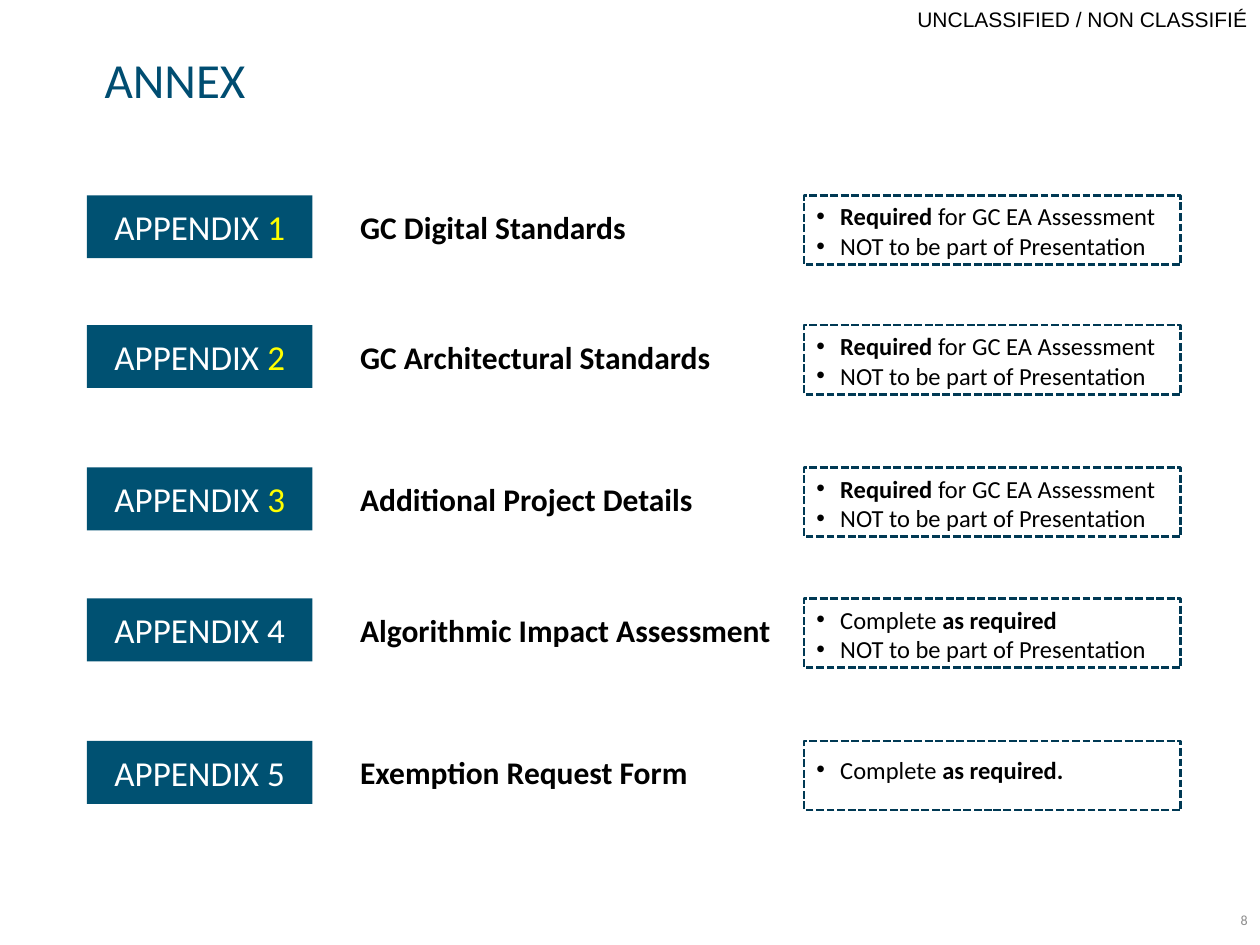
from lxml.etree import SubElement
from pptx import Presentation
from pptx.dml.color import RGBColor
from pptx.enum.dml import MSO_LINE
from pptx.enum.shapes import MSO_SHAPE
from pptx.enum.text import MSO_ANCHOR as ANCHOR, MSO_AUTO_SIZE as FIT, PP_ALIGN as ALIGN
from pptx.oxml.ns import qn
from pptx.util import Inches, Pt

BLACK = RGBColor(0x00, 0x00, 0x00)
WHITE = RGBColor(0xFF, 0xFF, 0xFF)
YELLOW = RGBColor(0xFF, 0xFF, 0x00)
GREY = RGBColor(0x8C, 0x8C, 0x8C)
TITLE_BLUE = RGBColor(0x00, 0x4D, 0x71)
TAG_BLUE = RGBColor(0x00, 0x51, 0x72)
NAVY = RGBColor(0x00, 0x39, 0x54)

REQUIRED = [("Required", {"bold": True}), (" for GC EA Assessment", {})]
NOT_PRESENTED = [("NOT to be part of Presentation", {})]

# top, number, number colour, name, width of name, notes, offset and height of notes
APPENDICES = [
    (1.55, "1", YELLOW, "GC Digital Standards", 2.39, [REQUIRED, NOT_PRESENTED], 0, 0.57),
    (2.58, "2", YELLOW, "GC Architectural Standards", 3.06, [REQUIRED, NOT_PRESENTED], 0, 0.57),
    (3.71, "3", YELLOW, "Additional Project Details", 2.92, [REQUIRED, NOT_PRESENTED], 0, 0.57),
    (4.75, "4", WHITE, "Algorithmic Impact Assessment", 3.54,
     [[("Complete ", {}), ("as required", {"bold": True})], NOT_PRESENTED], 0, 0.57),
    (5.88, "5", WHITE, "Exemption Request Form", 2.88,
     [[("Complete ", {}), ("as required.", {"bold": True})]], 0.06, 0.34),
]


def add_run(p, text, size=14, color=BLACK, bold=False, font="Calibri"):
    r = p.add_run()
    r.text = text
    r.font.name, r.font.size, r.font.bold = font, Pt(size), bold
    r.font.color.rgb = color


def set_indent(p, inches, bullet=None):
    """Give the paragraph a hanging indent and, if asked, a bullet."""
    pPr = p._p.get_or_add_pPr()
    pPr.set("marL", str(Inches(inches)))
    pPr.set("indent", str(-Inches(inches)))
    if bullet:
        SubElement(pPr, qn("a:buFont")).set("typeface", "Arial")
        SubElement(pPr, qn("a:buChar")).set("char", bullet)


class AnnexSlide:
    def __init__(self, prs):
        self.slide = prs.slides.add_slide(prs.slide_layouts[5])

    def title(self, text, left, top, width, height):
        sp = self.slide.shapes.title
        sp.left, sp.top, sp.width, sp.height = map(Inches, (left, top, width, height))
        tf = sp.text_frame
        tf.margin_left = tf.margin_top = tf.margin_right = tf.margin_bottom = 0
        tf.word_wrap, tf.auto_size = False, FIT.NONE
        tf.vertical_anchor = ANCHOR.MIDDLE
        p = tf.paragraphs[0]
        p.alignment = ALIGN.LEFT
        set_indent(p, 0.5)
        add_run(p, text, size=28, color=TITLE_BLUE)

    def rectangle(self, left, top, width, height):
        sp = self.slide.shapes.add_shape(
            MSO_SHAPE.RECTANGLE, *map(Inches, (left, top, width, height)))
        sp.shadow.inherit = False
        return sp

    def tag(self, number, color, left, top, width, height):
        sp = self.rectangle(left, top, width, height)
        sp.fill.solid()
        sp.fill.fore_color.rgb = TAG_BLUE
        sp.line.fill.background()
        sp.text_frame.vertical_anchor = ANCHOR.MIDDLE
        p = sp.text_frame.paragraphs[0]
        p.alignment = ALIGN.CENTER
        add_run(p, "APPENDIX ", size=20, color=WHITE)
        add_run(p, number, size=20, color=color)

    def dashed_frame(self, left, top, width, height):
        sp = self.rectangle(left, top, width, height)
        sp.fill.background()
        sp.line.color.rgb = NAVY
        sp.line.width = Pt(1.5)
        sp.line.dash_style = MSO_LINE.SQUARE_DOT

    def text_frame(self, left, top, width, height, wrap=True):
        tf = self.slide.shapes.add_textbox(*map(Inches, (left, top, width, height))).text_frame
        tf.word_wrap = wrap
        return tf

    def label(self, text, left, top, width, height, align=ALIGN.LEFT,
              anchor=ANCHOR.TOP, wrap=True, **style):
        tf = self.text_frame(left, top, width, height, wrap)
        tf.vertical_anchor = anchor
        p = tf.paragraphs[0]
        p.alignment = align
        add_run(p, text, **style)

    def bullets(self, items, left, top, width, height):
        tf = self.text_frame(left, top, width, height)
        for i, runs in enumerate(items):
            p = tf.add_paragraph() if i else tf.paragraphs[0]
            set_indent(p, 0.19, "•")
            for text, style in runs:
                add_run(p, text, **style)


def main():
    prs = Presentation()
    prs.slide_width, prs.slide_height = Inches(10), Inches(7.5)
    annex = AnnexSlide(prs)

    annex.label("UNCLASSIFIED / NON CLASSIFIÉ", 0, 0, 10, 0.3,
                align=ALIGN.RIGHT, size=12, font="Arial")
    annex.title("ANNEX", 0.83, 0.15, 5.94, 0.96)
    for top, number, color, name, name_width, notes, offset, notes_height in APPENDICES:
        annex.tag(number, color, 0.69, top, 1.79, 0.5)
        annex.label(name, 2.76, top + 0.05, name_width, 0.4, wrap=False, size=18, bold=True)
        annex.dashed_frame(6.38, top, 2.99, 0.55)
        annex.bullets(notes, 6.38, top + offset, 2.99, notes_height)
    annex.label("8", 9.58, 7.1, 0.42, 0.4, align=ALIGN.RIGHT, anchor=ANCHOR.MIDDLE,
                size=8, color=GREY)

    prs.save("out.pptx")


if __name__ == "__main__":
    main()
